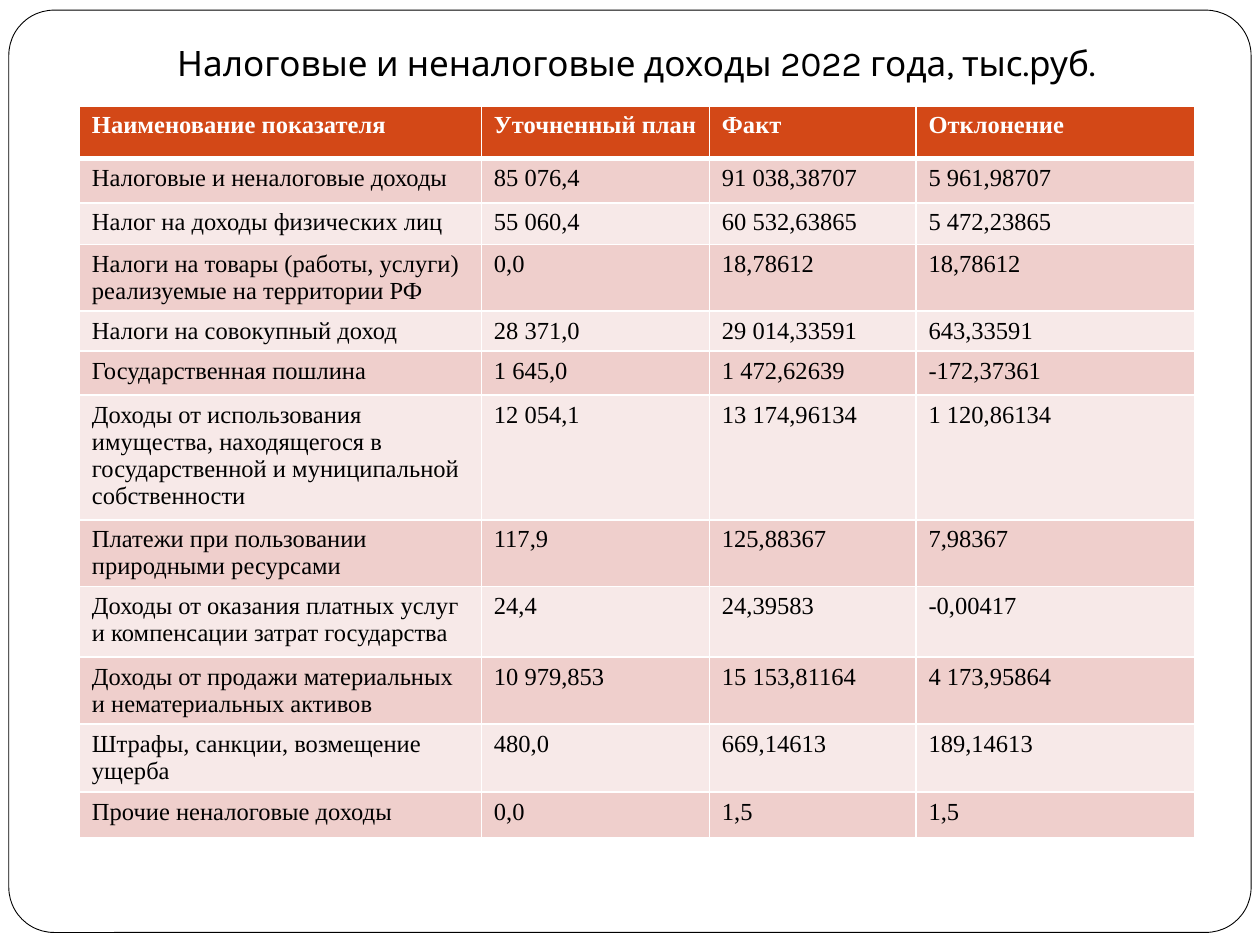
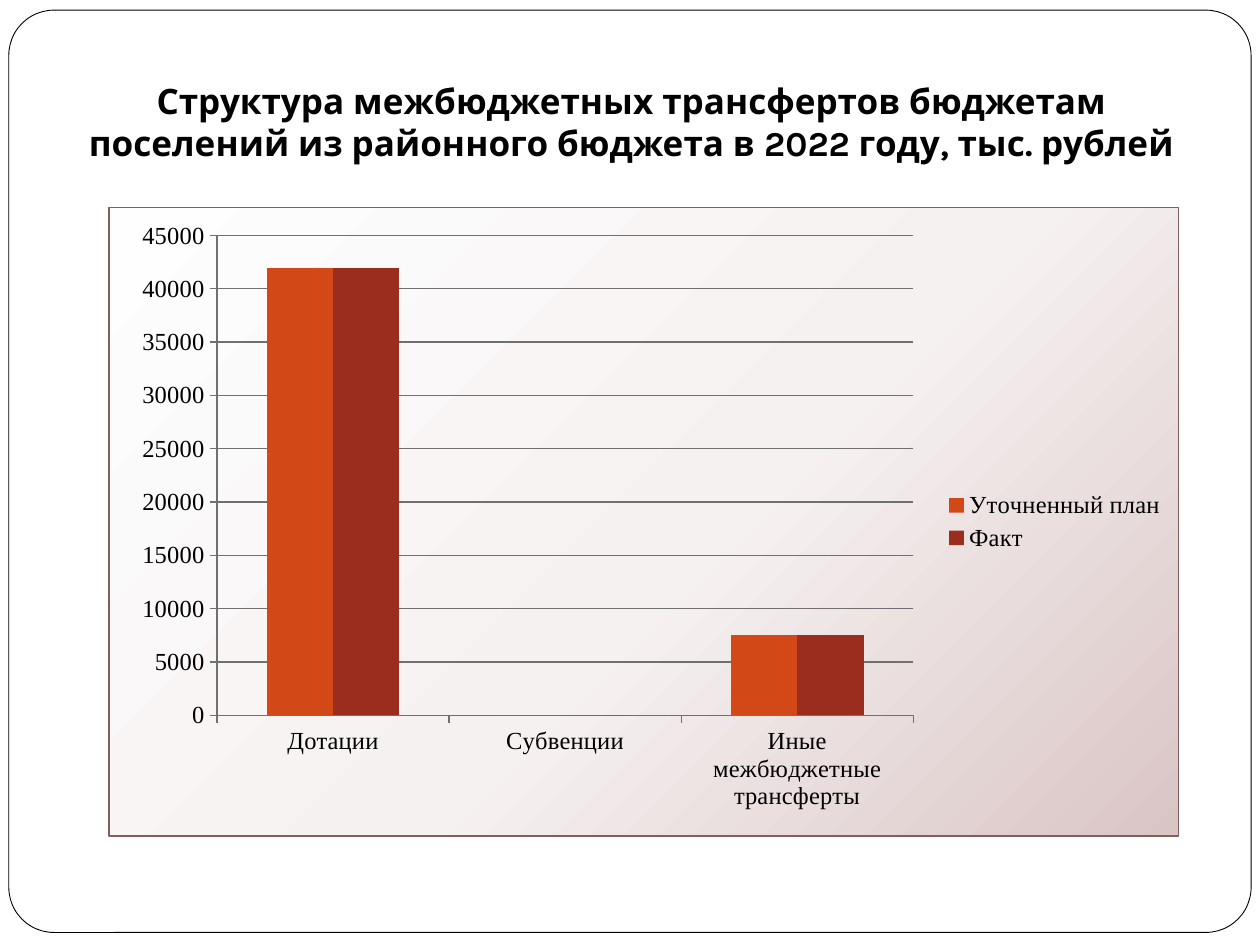
from lxml import etree
from pptx import Presentation
from pptx import util as u
from pptx.chart.data import CategoryChartData
from pptx.dml.color import RGBColor
from pptx.enum import chart as ch, shapes, text
from pptx.oxml import parse_xml
from pptx.oxml.ns import nsdecls, qn

COLORS = {
    "paper": "FFFFFF", "ink": "000000", "plan": "D34817", "fact": "9B2D1F",
    "band_dark": "EFCFCC", "band_light": "F7E9E8", "axis": "707070",
    "chart_border": "855D5D", "glow": "FEFEFE", "haze": "F6F1F1", "edge": "DAC5C5",
}
TITLE_FONT, BODY_FONT = "Karla", "Times New Roman"
TITLE_SIZE, BODY_SIZE = 20, 14

INCOME_HEADER = ("Наименование показателя", "Уточненный план", "Факт", "Отклонение")
INCOME_ROWS = [
    ("Налоговые и неналоговые доходы", "85 076,4", "91 038,38707", "5 961,98707"),
    ("Налог на доходы физических лиц", "55 060,4", "60 532,63865", "5 472,23865"),
    ("Налоги на товары (работы, услуги) реализуемые на территории РФ",
     "0,0", "18,78612", "18,78612"),
    ("Налоги на совокупный доход", "28 371,0", "29 014,33591", "643,33591"),
    ("Государственная пошлина", "1 645,0", "1 472,62639", "-172,37361"),
    ("Доходы от использования имущества, находящегося в государственной "
     "и муниципальной собственности", "12 054,1", "13 174,96134", "1 120,86134"),
    ("Платежи при пользовании природными ресурсами", "117,9", "125,88367", "7,98367"),
    ("Доходы от оказания платных услуг и компенсации затрат государства",
     "24,4", "24,39583", "-0,00417"),
    ("Доходы от продажи материальных и нематериальных активов",
     "10 979,853", "15 153,81164", "4 173,95864"),
    ("Штрафы, санкции, возмещение ущерба", "480,0", "669,14613", "189,14613"),
    ("Прочие неналоговые доходы", "0,0", "1,5", "1,5"),
]
INCOME_COLUMNS = (31.9, 18.1, 16.4, 22.1)
INCOME_HEIGHTS = (5.6, 4.67, 4.4, 5.6, 3.73, 4.67, 13.2, 6.8, 7.47, 7.07, 7.2, 4.8)

TRANSFER_KINDS = ("Дотации", "Субвенции", "Иные межбюджетные трансферты")
TRANSFERS = {
    "Уточненный план": ("plan", (42000, 0, 7500)),
    "Факт": ("fact", (42000, 0, 7500)),
}


def rgb(name):
    return RGBColor.from_string(COLORS[name])


def paint(fill, name):
    fill.solid()
    fill.fore_color.rgb = rgb(name)


class Deck:
    """Holds the style and the current slide; lengths are percent of the slide."""

    def __init__(self):
        self.prs = Presentation()
        self.prs.slide_width, self.prs.slide_height = u.Inches(10), u.Inches(7.5)
        self.slide = None

    def across(self, share):
        return round(self.prs.slide_width * share / 100)

    def down(self, share):
        return round(self.prs.slide_height * share / 100)

    def box(self, left, top, width, height):
        return self.across(left), self.down(top), self.across(width), self.down(height)

    def new_slide(self):
        self.slide = self.prs.slides.add_slide(self.prs.slide_layouts[5])

    def master_frame(self, *place):
        """Draw the rounded frame and move it to the master, behind everything."""
        frame = self.slide.shapes.add_shape(
            shapes.MSO_SHAPE.ROUNDED_RECTANGLE, *self.box(*place))
        frame.adjustments[0] = 0.049
        frame.shadow.inherit = False
        paint(frame.fill, "paper")
        frame.line.color.rgb = rgb("ink")
        frame.line.width = u.Pt(0.5)
        self.prs.slide_master.shapes.element.insert(2, frame.element)

    def styled_run(self, paragraph, words, font, size, color="ink", bold=False):
        run = paragraph.add_run()
        run.text = words
        run.font.name, run.font.size, run.font.bold = font, u.Pt(size), bold
        run.font.color.rgb = rgb(color)

    def title(self, words, *place, bold=False):
        title = self.slide.shapes.title
        title.left, title.top, title.width, title.height = self.box(*place)
        frame = title.text_frame
        frame.word_wrap = True
        frame.auto_size = text.MSO_AUTO_SIZE.NONE
        frame.vertical_anchor = text.MSO_ANCHOR.BOTTOM
        frame.margin_left = frame.margin_right = frame.margin_bottom = u.Inches(0.1)
        frame.margin_top = u.Inches(0.05)
        heading = frame.paragraphs[0]
        heading.alignment = text.PP_ALIGN.CENTER
        self.styled_run(heading, words, TITLE_FONT, TITLE_SIZE, bold=bold)

    def cell_borders(self, cell, **widths):
        properties = cell._tc.get_or_add_tcPr()
        for position, side in enumerate("LRTB"):
            line = parse_xml(
                f'<a:ln{side} {nsdecls("a")} w="{u.Pt(widths.get(side, 1))}">'
                f'<a:solidFill><a:srgbClr val="{COLORS["paper"]}"/></a:solidFill>'
                f'</a:ln{side}>')
            properties.insert(position, line)

    def table(self, header, rows, left, top, columns, heights):
        place = self.box(left, top, sum(columns), sum(heights))
        table = self.slide.shapes.add_table(len(heights), len(columns), *place).table
        for column, share in zip(table.columns, columns):
            column.width = self.across(share)
        for row, share in zip(table.rows, heights):
            row.height = self.down(share)
        for r, values in enumerate([header, *rows]):
            is_header = r == 0
            band = "plan" if is_header else "band_dark" if r % 2 else "band_light"
            borders = {0: {"B": 3}, 1: {"T": 3}}.get(r, {})
            for c, value in enumerate(values):
                cell = table.cell(r, c)
                paint(cell.fill, band)
                self.cell_borders(cell, **borders)
                self.styled_run(cell.text_frame.paragraphs[0], value, BODY_FONT,
                                BODY_SIZE, "paper" if is_header else "ink", is_header)

    def column_chart(self, categories, series, *place):
        data = CategoryChartData()
        data.categories = categories
        for name, (_, values) in series.items():
            data.add_series(name, values)
        chart = self.slide.shapes.add_chart(
            ch.XL_CHART_TYPE.COLUMN_CLUSTERED, *self.box(*place), data).chart
        chart.has_title = False
        chart.font.name, chart.font.size = BODY_FONT, u.Pt(BODY_SIZE)
        chart.font.color.rgb = rgb("ink")
        chart.has_legend = True
        chart.legend.position = ch.XL_LEGEND_POSITION.RIGHT
        chart.legend.include_in_layout = False
        plot = chart.plots[0]
        plot.gap_width, plot.overlap, plot.vary_by_categories = 150, 0, False
        for bars, (color, _) in zip(plot.series, series.values()):
            paint(bars.format.fill, color)
            bars.invert_if_negative = False
        amounts = chart.value_axis
        amounts.minimum_scale, amounts.maximum_scale = 0, 45000
        amounts.major_unit = 5000
        amounts.has_major_gridlines = True
        for ruled in (amounts, chart.category_axis, amounts.major_gridlines):
            ruled.format.line.color.rgb = rgb("axis")
            ruled.format.line.width = u.Pt(0.75)
        for axis in (amounts, chart.category_axis):
            axis.major_tick_mark = ch.XL_TICK_MARK.OUTSIDE
        self.chart_layout(chart, x=0.101, y=0.045, w=0.651, h=0.763)
        self.chart_background(chart)

    def chart_layout(self, chart, **shares):
        """Fix the inner plot area as shares of the chart."""
        area = chart.element.find(".//" + qn("c:plotArea"))
        for automatic in area.findall(qn("c:layout")):
            area.remove(automatic)
        layout = etree.Element(qn("c:layout"))
        manual = etree.SubElement(layout, qn("c:manualLayout"))
        settings = {"layoutTarget": "inner", "xMode": "edge", "yMode": "edge", **shares}
        for tag, value in settings.items():
            etree.SubElement(manual, qn("c:" + tag), val=str(value))
        area.insert(0, layout)

    def chart_background(self, chart):
        stops = "".join(
            f'<a:gs pos="{share * 1000}"><a:srgbClr val="{COLORS[name]}"/></a:gs>'
            for share, name in ((0, "glow"), (55, "haze"), (100, "edge")))
        background = parse_xml(
            f'<c:spPr {nsdecls("c", "a")}><a:gradFill><a:gsLst>{stops}</a:gsLst>'
            '<a:path path="circle">'
            '<a:fillToRect l="-40000" t="-90000" r="140000" b="190000"/></a:path>'
            f'</a:gradFill><a:ln w="{u.Pt(0.75)}"><a:solidFill>'
            f'<a:srgbClr val="{COLORS["chart_border"]}"/></a:solidFill></a:ln></c:spPr>')
        chart.element.find(qn("c:chart")).addnext(background)


def main():
    deck = Deck()

    deck.new_slide()
    deck.master_frame(0.7, 1.07, 98.6, 97.6)
    deck.title("Налоговые и неналоговые доходы 2022 года, тыс.руб.", 4.3, 1.73, 92.4, 8.4)
    deck.table(INCOME_HEADER, INCOME_ROWS, 6.3, 11.2, INCOME_COLUMNS, INCOME_HEIGHTS)

    deck.new_slide()
    deck.title("Структура межбюджетных трансфертов бюджетам поселений "
               "из районного бюджета в 2022 году, тыс. рублей",
               5.1, 5.87, 90, 12.8, bold=True)
    paint(deck.slide.shapes.title.fill, "paper")
    deck.column_chart(TRANSFER_KINDS, TRANSFERS, 8.6, 21.87, 85, 66.67)

    deck.prs.save("out.pptx")


if __name__ == "__main__":
    main()
